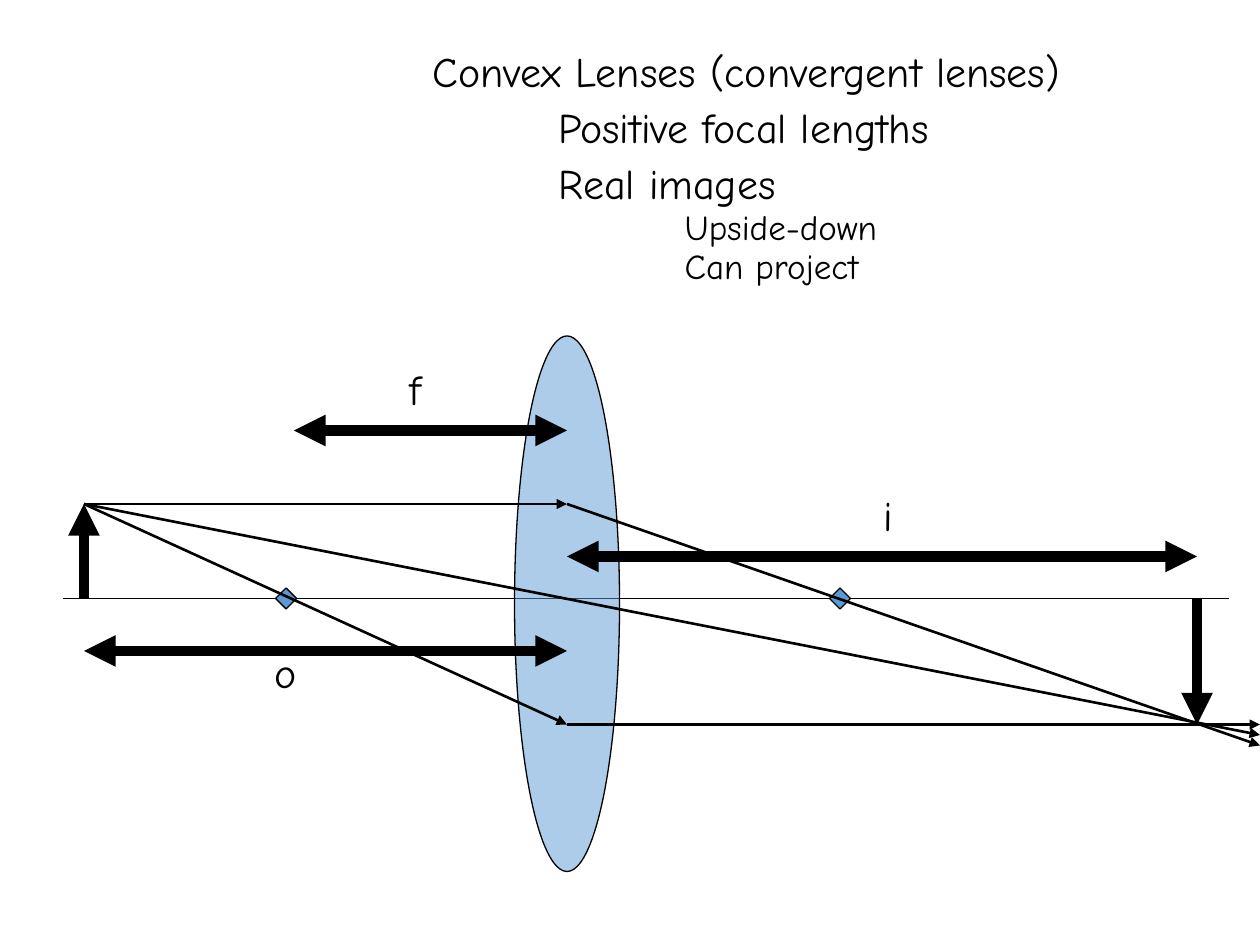
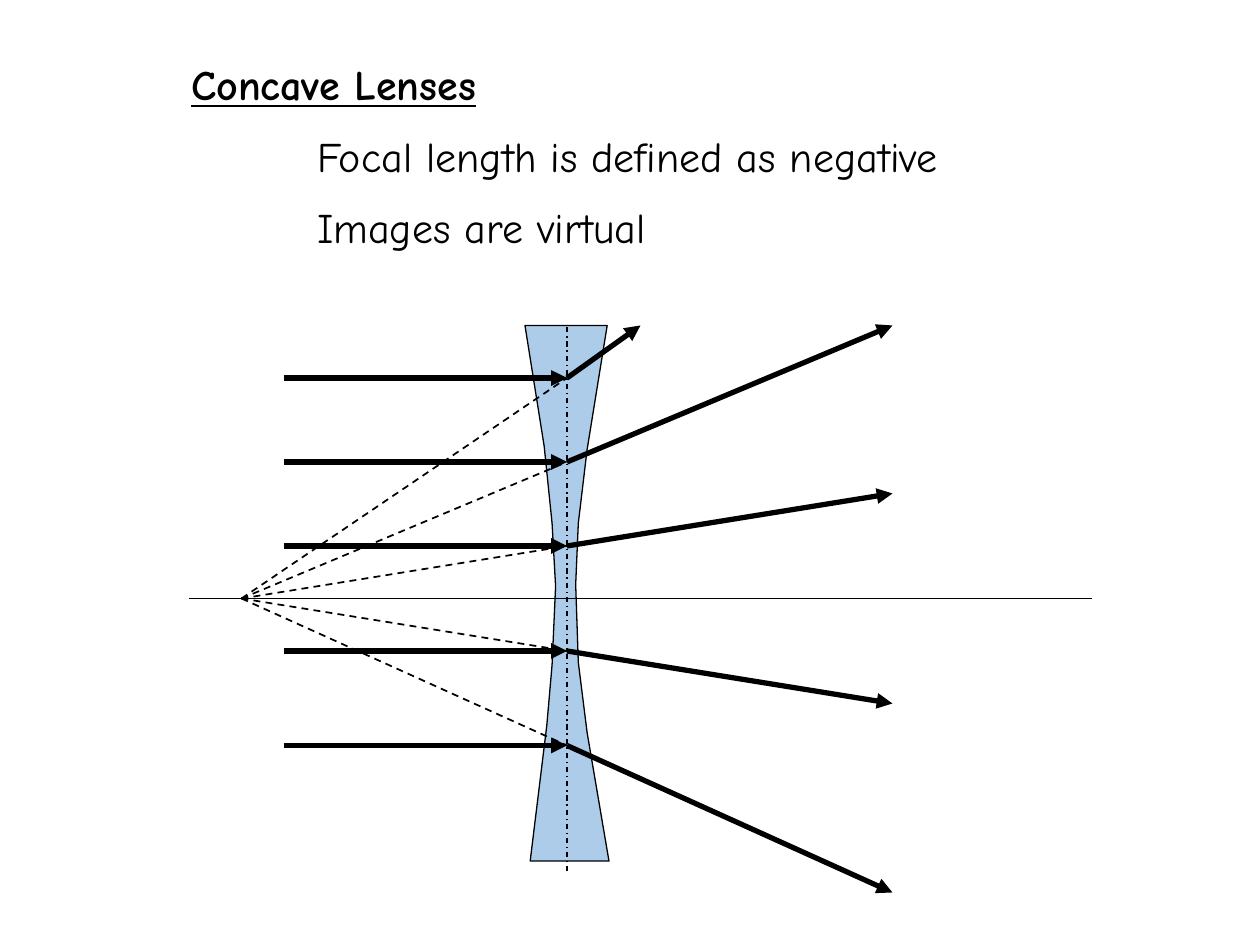
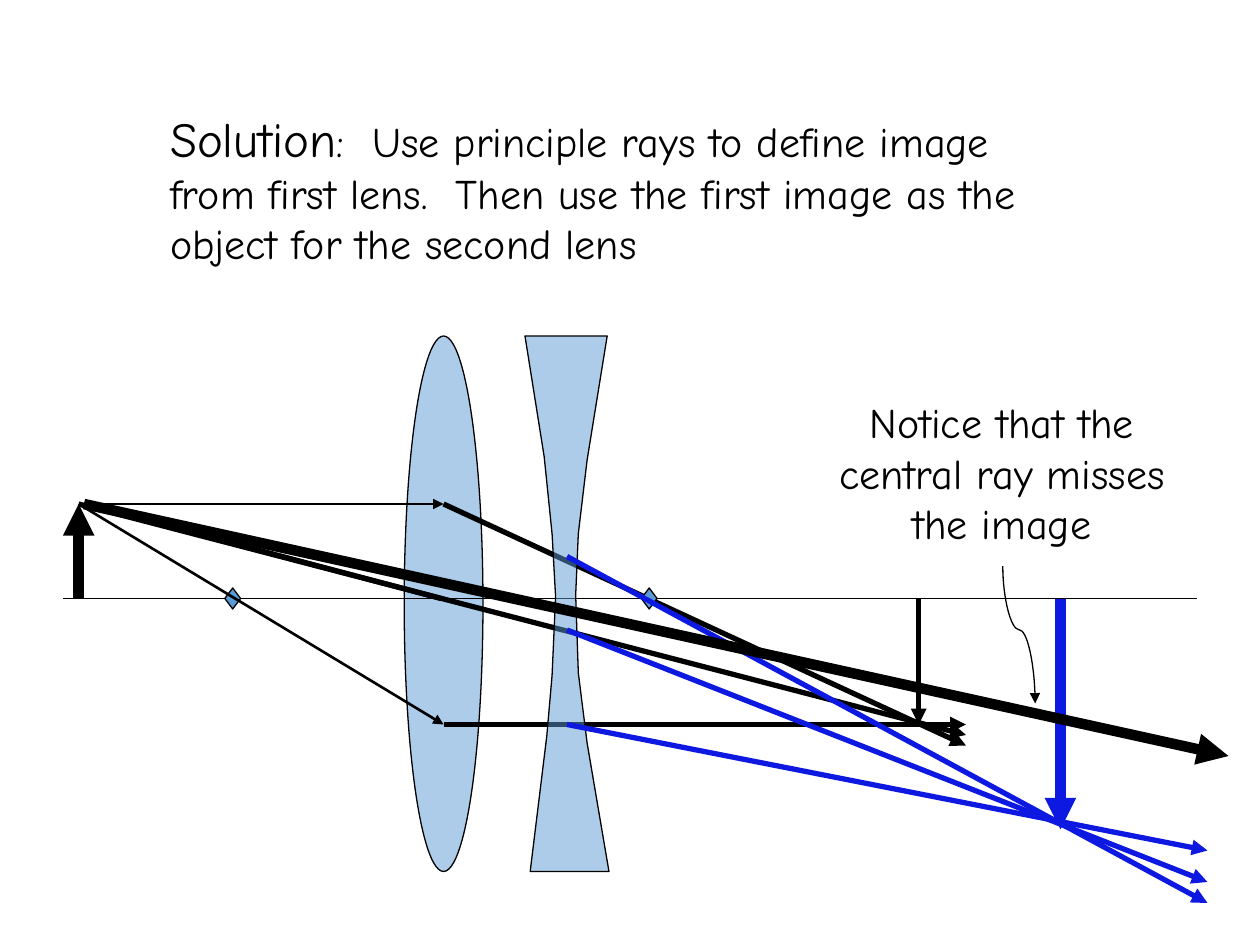
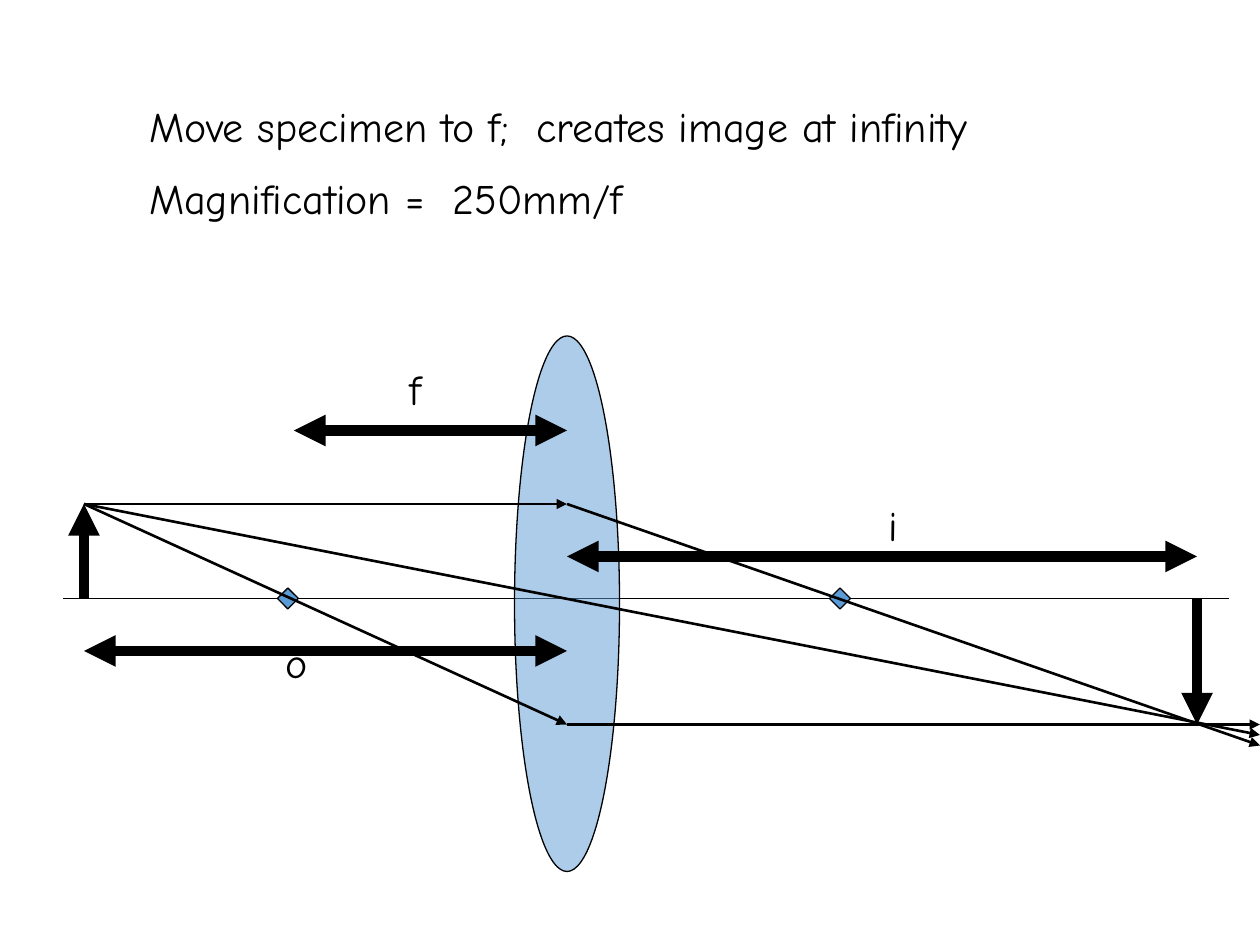
"""Build four slides of ray diagrams for convex and concave lenses."""
from lxml import etree
from pptx import Presentation
from pptx import util as u
from pptx.dml.color import RGBColor
from pptx.enum import dml, shapes, text
from pptx.oxml.ns import qn

Pt = u.Pt
BLACK = RGBColor(0x00, 0x00, 0x00)
GLASS = RGBColor(0x5B, 0x9B, 0xD5)
BLUE = RGBColor(0x0D, 0x18, 0xE1)
FONT = "Comic Neue"
AXIS_Y = 342
LENS_X = 324
LENS_TOP, LENS_H = 192, 306
CONCAVE = [(303, 492), (348, 492), (335.5, 418.5), (330.5, 378.5), (329, 334),
           (330.5, 299), (335.5, 257), (347, 186), (300, 186), (311, 255),
           (315.5, 299), (317.5, 335), (315.5, 380), (312.5, 414.5)]


def add_line(s, x1, y1, x2, y2, width, ends="tail", color=BLACK, dash=None,
             kind=shapes.MSO_CONNECTOR.STRAIGHT):
    """Draw a line with triangle arrowheads at the named ends."""
    c = s.shapes.add_connector(kind, Pt(x1), Pt(y1), Pt(x2), Pt(y2))
    c.line.color.rgb = color
    for name, value in {"width": Pt(width), "dash_style": dash}.items():
        setattr(c.line, name, value)
    for end in ends.split():
        etree.SubElement(c.line._ln, qn(f"a:{end}End"), type="triangle")
    etree.SubElement(c._element.spPr, qn("a:effectLst"))
    return c


def add_glass(s, kind, x=0, y=0, w=0, h=0, opacity=100):
    """Draw a preset shape, or the concave lens moved down by y."""
    if kind == "concave":
        points = [(Pt(px), Pt(py + y)) for px, py in CONCAVE]
        fb = s.shapes.build_freeform(*points[0])
        fb.add_line_segments(points[1:], close=True)
        sp = fb.convert_to_shape()
    else:
        sp = s.shapes.add_shape(kind, Pt(x), Pt(y), Pt(w), Pt(h))
    sp.shadow.inherit = False
    sp.fill.solid()
    sp.fill.fore_color.rgb = GLASS
    sp.line.color.rgb = BLACK
    sp.line.width = Pt(0.75)
    if opacity < 100:
        clr = sp._element.spPr.find(qn("a:solidFill")).find(qn("a:srgbClr"))
        etree.SubElement(clr, qn("a:alpha"), val=str(opacity * 1000))


prs = Presentation()
prs.slide_width, prs.slide_height = Pt(720), Pt(540)
convex, concave, solution, magnifier = [
    prs.slides.add_slide(prs.slide_layouts[i]) for i in (1, 1, 5, 1)]
OVAL, DIAMOND = shapes.MSO_SHAPE.OVAL, shapes.MSO_SHAPE.DIAMOND

for s, focus_x in ((convex, 157.5), (magnifier, 158.5)):
    add_line(s, 36, AXIS_Y, 702, AXIS_Y, 0.75, ends="")
    add_glass(s, OVAL, LENS_X - 30, LENS_TOP, 60, LENS_H, opacity=50)
    add_line(s, 48, 288, 720, 420, 1.5)
    for x in (474, focus_x):
        add_glass(s, DIAMOND, x, AXIS_Y - 6, 12, 12)
    add_line(s, 48, AXIS_Y, 48, 288, 6)
    for y, end_y in ((288, 426), (414, 414)):
        add_line(s, 48, 288, LENS_X, y, 1.5)
        add_line(s, LENS_X, y, 720, end_y, 1.5)
    add_line(s, 684, AXIS_Y, 684, 414, 6)
    for x1, x2, y in ((168, LENS_X, 246), (LENS_X, 684, 318), (LENS_X, 48, 372)):
        add_line(s, x1, y, x2, y, 6, ends="head tail")

s = concave
add_glass(s, "concave", opacity=50)
add_line(s, 108, AXIS_Y, 624, AXIS_Y, 0.75, ends="")
rays = [(216, 366, 186), (264, 510, 186), (312, 510, 282), (372, 510, 402), (426, 510, 510)]
for y, end_x, end_y in rays:
    add_line(s, 162, y, LENS_X, y, 3)
    add_line(s, 138, AXIS_Y, LENS_X, y, 1, ends="", dash=dml.MSO_LINE.DASH)
    add_line(s, LENS_X, y, end_x, end_y, 3)
add_line(s, LENS_X, 498, LENS_X, 186, 0.75, ends="", dash=dml.MSO_LINE.DASH_DOT)

s = solution
first_x = 253.5
add_glass(s, OVAL, first_x - 22.5, LENS_TOP, 45, LENS_H, opacity=50)
for x, y, end_y in ((45, 288, 420), (first_x, 288, 426), (first_x, 414, 414)):
    add_line(s, x, y, 552, end_y, 3)
add_line(s, 36, AXIS_Y, 684, AXIS_Y, 0.75, ends="")
for x in (366.5, 128.5):
    add_glass(s, DIAMOND, x, AXIS_Y - 6, 9, 12)
add_line(s, 45, AXIS_Y, 45, 288, 6)
for y in (288, 414):
    add_line(s, 45, 288, first_x, y, 1.5)
add_line(s, 525, AXIS_Y, 525, 414, 3)
add_line(s, 48, 288, 252, AXIS_Y, 3, ends="")
add_glass(s, "concave", y=6, opacity=50)
add_line(s, 606, AXIS_Y, 606, 474, 6, color=BLUE)
for y, end_y in ((318, 516), (360, 504), (414, 486)):
    add_line(s, LENS_X, y, 690, end_y, 3, color=BLUE)
add_line(s, 48, 288, 702, 432, 6)
c = add_line(s, 621.5, 353.5, 543, 372, 0.75, kind=shapes.MSO_CONNECTOR.CURVE)
c._element.spPr.find(qn("a:xfrm")).set("rot", str(270 * 60000))
geom = c._element.spPr.find(qn("a:prstGeom"))
etree.SubElement(geom.find(qn("a:avLst")), qn("a:gd"), name="adj1", fmla="val 46300")

PLAIN = {"size": Pt(24)}
SMALL = {"size": Pt(20)}
HEADING = {"size": Pt(24), "bold": True, "underline": True}
LARGE = {"size": Pt(28)}
blocks = [
    (convex, (240, 30, 420, 252), [
        (0, 0.7, [("Convex Lenses (convergent lenses)", PLAIN)]),
        (72, 0.7, [("Positive focal lengths", PLAIN)]),
        (72, 0.7, [("Real images", PLAIN)]),
        (144, 0.5, [("Upside-down", SMALL)]),
        (144, 0.5, [("Can project", SMALL)])]),
    (concave, (102, 30, 516, 221), [
        (0, 1.0, [("Concave Lenses", HEADING)]),
        (72, 1.0, [("Focal length is defined as negative", PLAIN)]),
        (72, 1.0, [("Images are virtual", PLAIN)])]),
    (solution, (90, 51, 510, 113), [
        (0, 1.0, [("Solution", LARGE),
                  (":  Use principle rays to define image from first lens.  "
                   "Then use the first image as the object for the second lens", PLAIN)])]),
    (magnifier, (78, 54, 540, 171), [
        (0, 1.0, [("Move specimen to f;  creates image at infinity", PLAIN)]),
        (0, 1.0, [("Magnification =  250mm/f", PLAIN)])]),
]
for s, box, paragraphs in blocks:
    sp = s.placeholders[0 if s is solution else 1]
    for name, value in zip(("left", "top", "width", "height"), box):
        setattr(sp, name, Pt(value))
    tf = sp.text_frame
    tf.word_wrap = True
    tf.auto_size = text.MSO_AUTO_SIZE.SHAPE_TO_FIT_TEXT
    for i, (indent, spacing, runs) in enumerate(paragraphs):
        p = tf.add_paragraph() if i else tf.paragraphs[0]
        fmt = {"alignment": text.PP_ALIGN.LEFT, "line_spacing": spacing,
               "space_before": runs[0][1]["size"] // 2}
        for name, value in fmt.items():
            setattr(p, name, value)
        pPr = p._p.get_or_add_pPr()
        pPr.set("marL", str(Pt(indent)))
        pPr.set("indent", "0")
        etree.SubElement(pPr, qn("a:buNone"))
        for words, fmt in runs:
            r = p.add_run()
            r.text = words
            r.font.color.rgb = BLACK
            for name, value in {"name": FONT, **fmt}.items():
                setattr(r.font, name, value)

labels = [
    (convex, "f", 227, 204, 27, 41),
    (convex, "o", 150, 366, 27, 41),
    (convex, "i", 498, 276, 22, 41),
    (solution, "Notice that the central ray misses the image", 456, 216, 233, 108),
    (magnifier, "f", 227, 204, 27, 41),
    (magnifier, "o", 156, 360, 27, 41),
    (magnifier, "i", 500.5, 282, 22, 41),
]
for s, words, *box in labels:
    tf = s.shapes.add_textbox(*map(Pt, box)).text_frame
    fmt = {"word_wrap": s is solution, "auto_size": text.MSO_AUTO_SIZE.SHAPE_TO_FIT_TEXT}
    if s is solution:
        fmt["vertical_anchor"] = text.MSO_ANCHOR.MIDDLE
    for name, value in fmt.items():
        setattr(tf, name, value)
    p = tf.paragraphs[0]
    p.alignment = text.PP_ALIGN.CENTER if s is solution else text.PP_ALIGN.LEFT
    r = p.add_run()
    r.text = words
    r.font.color.rgb = BLACK
    for name, value in {"name": FONT, **PLAIN}.items():
        setattr(r.font, name, value)

for s in prs.slides:
    for sp in list(s.placeholders):
        if not sp.text_frame.text:
            sp._element.getparent().remove(sp._element)

prs.save("out.pptx")
